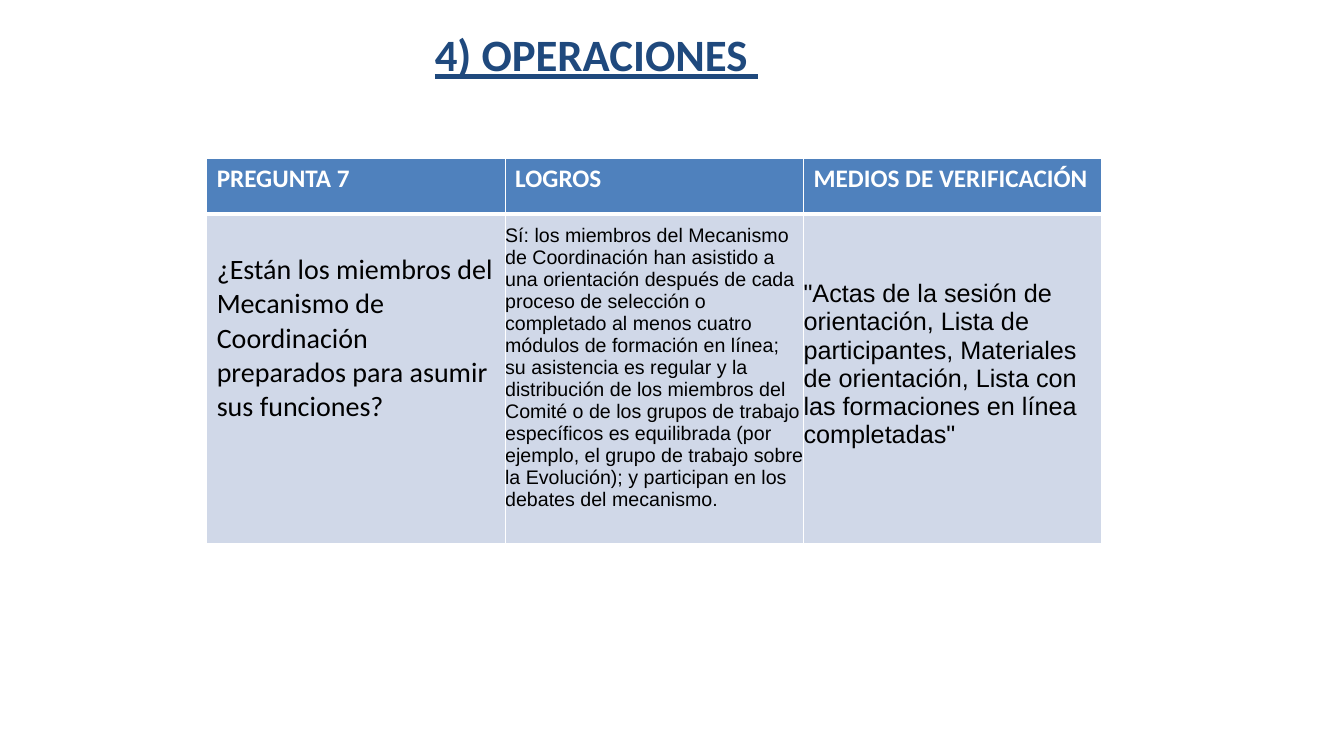
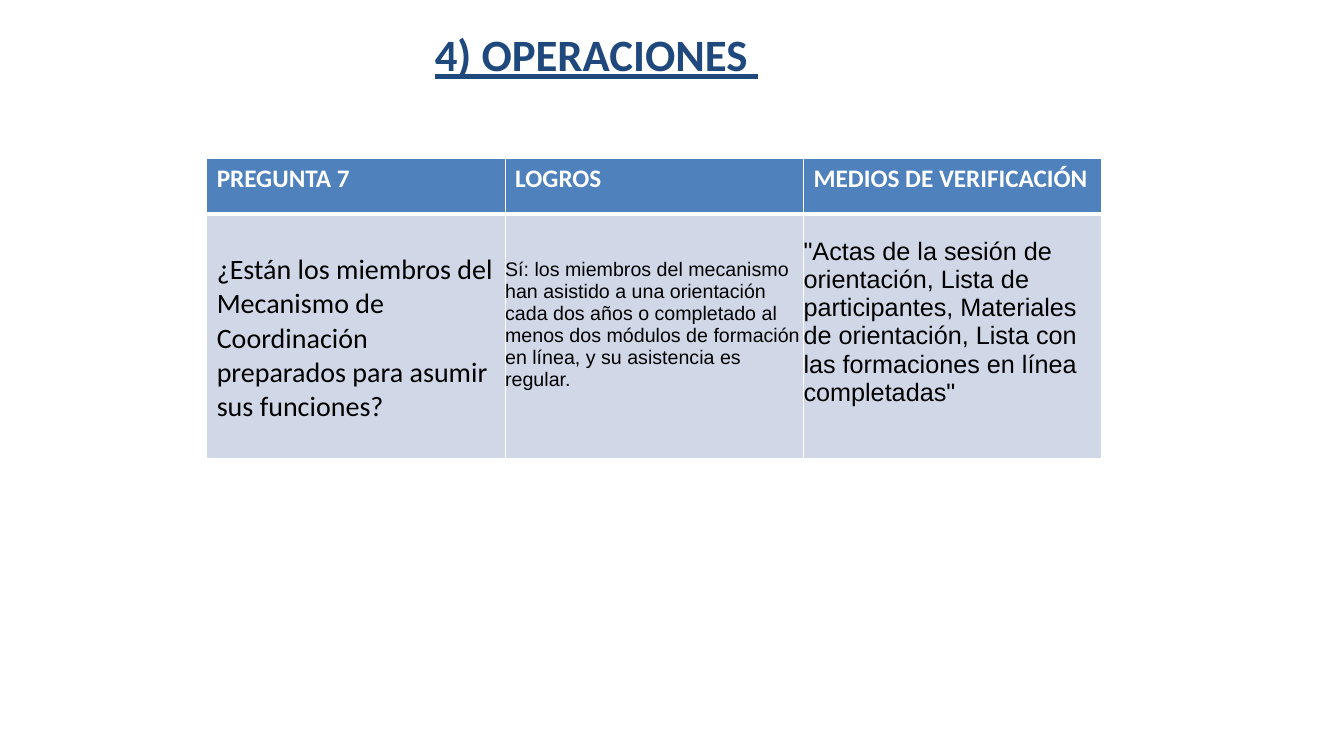
from lxml.etree import SubElement as Sub
from pptx import Presentation
from pptx.dml.color import RGBColor
from pptx.enum.text import MSO_ANCHOR as Anchor, PP_ALIGN as Align
from pptx.oxml.ns import qn
from pptx.util import Inches, Pt

NAVY = RGBColor(0x1F, 0x49, 0x7D)
BLUE = RGBColor(0x4F, 0x81, 0xBD)
PALE = RGBColor(0xD0, 0xD8, 0xE8)
WHITE = RGBColor(0xFF, 0xFF, 0xFF)
BLACK = RGBColor(0, 0, 0)

TITLE = "4) OPERACIONES "
HEADS = ["PREGUNTA 7", "LOGROS", "MEDIOS DE VERIFICACIÓN"]
ASK = ("¿Están los miembros del Mecanismo de Coordinación preparados "
       "para asumir sus funciones?")
PROOF = ('"Actas de la sesión de orientación, Lista de participantes, '
         'Materiales de orientación, Lista con las formaciones en línea '
         'completadas"')
GOALS = [
    ("Sí: los miembros del Mecanismo de Coordinación han asistido a una "
     "orientación después de cada proceso de selección o completado al menos "
     "cuatro módulos de formación en línea; su asistencia es regular y la "
     "distribución de los miembros del Comité o de los grupos de trabajo "
     "específicos es equilibrada (por ejemplo, el grupo de trabajo sobre la "
     "Evolución); y participan en los debates del mecanismo.", 3.27),
    ("Sí: los miembros del mecanismo han asistido a una orientación cada dos "
     "años o completado al menos dos módulos de formación en línea, y su "
     "asistencia es regular.", 2.43),
]
HEAD_H = 0.55
COL_W = 2.96


def style(frame, text, size, color, face="Calibri", bold=False, under=False):
    frame.text = text
    font = frame.paragraphs[0].runs[0].font
    font.name, font.size, font.bold = face, Pt(size), bold
    font.underline = under
    font.color.rgb = color


def add_title(slide):
    box = slide.shapes.add_textbox(
        Inches(2.49), Inches(0.22), Inches(6.85), Inches(1.18))
    frame = box.text_frame
    frame.word_wrap = True
    style(frame, TITLE, 32, NAVY, bold=True, under=True)
    frame.paragraphs[0].alignment = Align.CENTER


def edge(cell, top, low):
    props = cell._tc.get_or_add_tcPr()
    for side, width in zip("LRTB", (1, 1, top, low)):
        line = Sub(props, qn(f"a:ln{side}"), w=str(Pt(width)))
        fill = Sub(line, qn("a:solidFill"))
        Sub(fill, qn("a:srgbClr"), val=str(WHITE))


def paint(cell, color, top, low):
    edge(cell, top, low)
    cell.fill.solid()
    cell.fill.fore_color.rgb = color


def center(cell, gap):
    cell.vertical_anchor = Anchor.MIDDLE
    cell.margin_left = cell.margin_right = cell.margin_top = 0
    cell.margin_bottom = Inches(gap)


def add_grid(slide, goal, height):
    grid = slide.shapes.add_table(
        2, len(HEADS), Inches(2.05), Inches(1.57),
        Inches(COL_W * len(HEADS)), Inches(HEAD_H + height)).table
    grid.horz_banding = False
    grid.rows[0].height = Inches(HEAD_H)
    grid.rows[1].height = Inches(height)
    for col, head in enumerate(HEADS):
        grid.columns[col].width = Inches(COL_W)
        cell = grid.cell(0, col)
        paint(cell, BLUE, 1, 3)
        style(cell.text_frame, head, 18, WHITE, bold=True)
        paint(grid.cell(1, col), PALE, 3, 1)

    ask, goals, proof = grid.rows[1].cells
    ask.margin_top = Inches(0.39)
    style(ask.text_frame, ASK, 20, BLACK)
    center(goals, 0.22)
    style(goals.text_frame, goal, 14, BLACK, "Arial")
    center(proof, 0.28)
    style(proof.text_frame, PROOF, 18, BLACK, "Arial")


def main():
    deck = Presentation()
    deck.slide_width, deck.slide_height = Inches(13.33), Inches(7.5)
    for goal, height in GOALS:
        slide = deck.slides.add_slide(deck.slide_layouts[6])
        add_title(slide)
        add_grid(slide, goal, height)
    deck.save("out.pptx")


if __name__ == "__main__":
    main()
